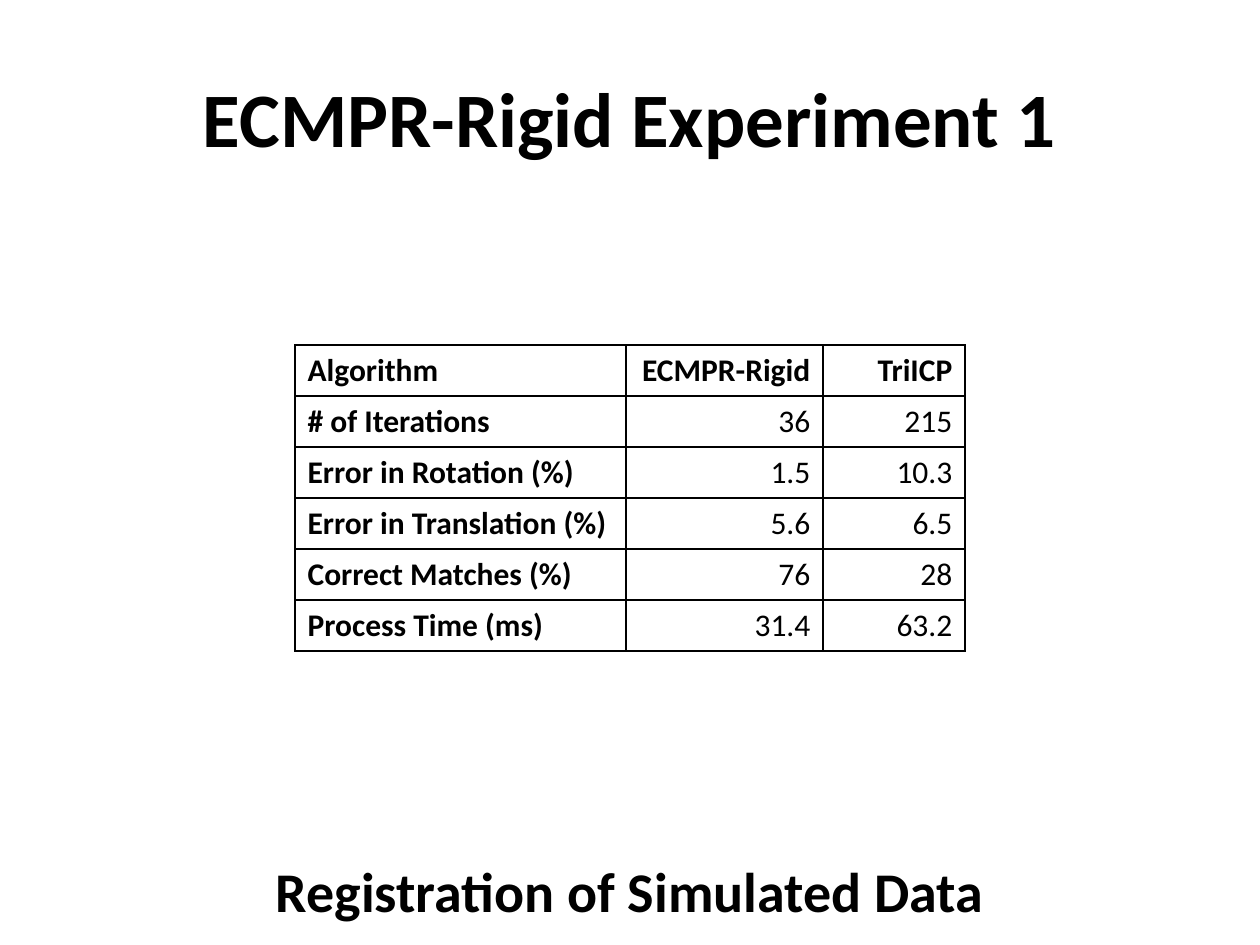
from lxml.etree import SubElement as Sub
from pptx import Presentation as Deck
from pptx.dml.color import RGBColor as Color
from pptx.enum.text import MSO_ANCHOR as Anchor, PP_ALIGN as Align
from pptx.oxml.ns import qn
from pptx.util import Emu, Pt

SCALE = 914400 / 126


def px(n):
    return Emu(round(n * SCALE))


def tint(code):
    return Color.from_string(code)


def write(frame, text, size=18, bold=False, align=Align.LEFT, font="Calibri", ink="000000"):
    par = frame.paragraphs[0]
    par.alignment = align
    run = par.add_run()
    run.text = text
    run.font.name = font
    run.font.size = Pt(size)
    run.font.bold = bold
    run.font.color.rgb = tint(ink)


class Page:
    ink = "000000"
    paper = "FFFFFF"
    font = "Calibri"

    def __init__(self, deck):
        self.slide = deck.slides.add_slide(deck.slide_layouts[6])
        fill = self.slide.background.fill
        fill.solid()
        fill.fore_color.rgb = tint(self.paper)

    def label(self, box, text, size, anchor):
        frame = self.slide.shapes.add_textbox(*map(px, box)).text_frame
        frame.word_wrap = True
        frame.vertical_anchor = anchor
        write(frame, text, size=size, bold=True, align=Align.CENTER, font=self.font, ink=self.ink)

    def edge(self, cell):
        props = cell._tc.get_or_add_tcPr()
        for side in "LRTB":
            line = Sub(props, qn(f"a:ln{side}"), w=str(Pt(1)))
            Sub(Sub(line, qn("a:solidFill")), qn("a:srgbClr"), val=self.ink)

    def table(self, left, top, widths, height, rows):
        box = left, top, sum(widths), height * len(rows)
        grid = self.slide.shapes.add_table(len(rows), len(widths), *map(px, box)).table
        grid.first_row = grid.horz_banding = False
        for col, width in zip(grid.columns, widths):
            col.width = px(width)
        for r, row in enumerate(rows):
            grid.rows[r].height = px(height)
            for c, text in enumerate(row):
                cell = grid.cell(r, c)
                self.edge(cell)
                cell.fill.solid()
                cell.fill.fore_color.rgb = tint(self.paper)
                cell.vertical_anchor = Anchor.MIDDLE
                write(cell.text_frame, text, bold=r == 0 or c == 0,
                      align=Align.RIGHT if c else Align.LEFT, font=self.font, ink=self.ink)


def main():
    deck = Deck()
    deck.slide_width, deck.slide_height = px(1260), px(945)
    page = Page(deck)
    page.label((63, 38, 1134, 157), "ECMPR-Rigid Experiment 1", 44, Anchor.MIDDLE)
    page.label((247, 850, 766, 95), "Registration of Simulated Data", 32, Anchor.TOP)
    page.table(295, 345, (331, 197, 142), 51, [
        ("Algorithm", "ECMPR-Rigid", "TriICP"),
        ("# of Iterations", "36", "215"),
        ("Error in Rotation (%)", "1.5", "10.3"),
        ("Error in Translation (%)", "5.6", "6.5"),
        ("Correct Matches (%)", "76", "28"),
        ("Process Time (ms)", "31.4", "63.2"),
    ])
    deck.save("out.pptx")


if __name__ == "__main__":
    main()
